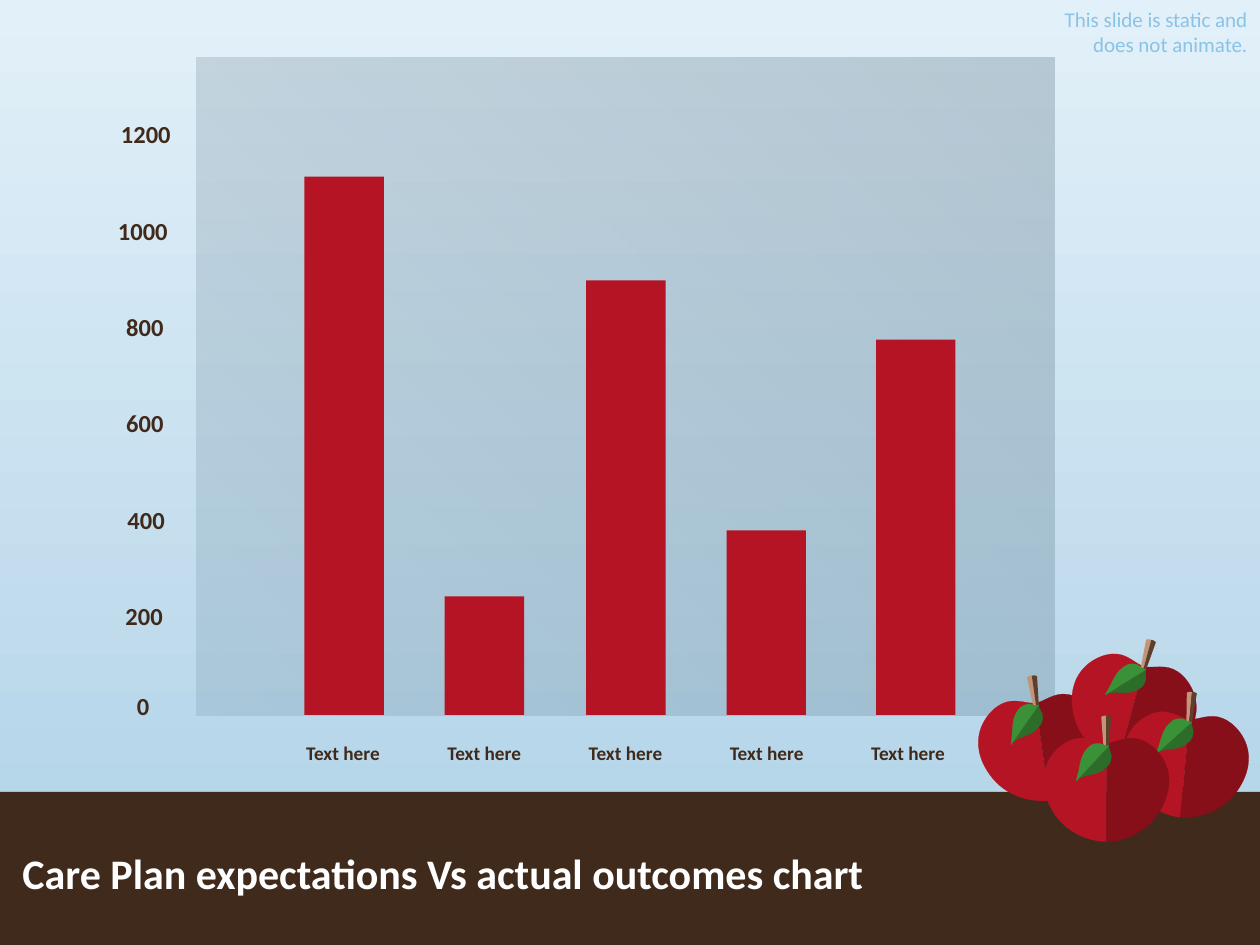
from dataclasses import dataclass
from math import cos, radians, sin

from lxml import etree
from pptx import Presentation
from pptx.dml.color import RGBColor
from pptx.enum.shapes import MSO_SHAPE
from pptx.enum.text import MSO_AUTO_SIZE, PP_ALIGN
from pptx.oxml.ns import qn
from pptx.util import Inches, Pt

RECTANGLE = MSO_SHAPE.RECTANGLE
GROW = MSO_AUTO_SIZE.SHAPE_TO_FIT_TEXT
LEFT, CENTER, RIGHT = PP_ALIGN.LEFT, PP_ALIGN.CENTER, PP_ALIGN.RIGHT

COLUMNS, ROWS = 100, 75
BASELINE = 56.75
TICK_STEP = 7.65
ROWS_PER_UNIT = TICK_STEP / 200
BAR_WIDTH = 6.3
FLOOR = 62.85

TICKS = [("0", 7.36), ("200", 7.44), ("400", 7.6), ("600", 7.5),
         ("800", 7.5), ("1000", 7.34), ("1200", 7.58)]
BARS = [(24.17, 1117), (35.3, 246), (46.53, 902), (57.67, 383), (69.53, 779)]
APPLES = [(82.2, 55.8, -8), (90.8, 52.9, 15.2), (94.4, 57.1, 5.3), (87.8, 59, 0)]

FLESH = [(0, 0), [(-0.7, 0), (-1.6, -0.7), (-2.7, -0.3)],
         [(-3.9, 0.1), (-5.8, 1.9), (-4.6, 4.7)],
         [(-3.4, 7.5), (-0.7, 7.8), (0, 7.8)]]
STEM = [(0, -2.2), [(-0.2, -2.2), (-0.3, -2.2), (-0.4, -2.1)],
        (-0.2, 0.5), [(-0.2, 0.5), (-0.1, 0.6), (0, 0.6)]]
LEAF_SHADE = [(-2.4, 3), [(-2, 2.6), (-1.7, 2.6), (-1.3, 2.5)],
              [(-0.8, 2.4), (-0.4, 2.3), (0, 1.9)],
              [(0.4, 1.6), (0.4, 1.2), (0.4, 0.9)],
              [(0.3, 0.7), (0.2, 0.3), (0.2, 0.2)]]
LEAF_LIGHT = [(-2.4, 3), (0.2, 0.2), [(-0.1, 0.2), (-0.3, 0.1), (-0.5, 0)],
              [(-0.8, 0), (-1.2, 0), (-1.5, 0.4)],
              [(-1.9, 0.8), (-2, 1.3), (-2.1, 1.7)],
              [(-2.2, 2.3), (-2.3, 2.6), (-2.4, 3)]]


@dataclass(frozen=True)
class Theme:
    font: str = "Calibri"
    sky: tuple = ("E2F0F9", "AED1E6")
    panel: str = "0E2C3E"
    brown: str = "402A1C"
    white: str = "FFFFFF"
    note: str = "89C3E5"
    red: str = "B41423"
    dark_red: str = "870F1A"
    stem: str = "C29578"
    dark_stem: str = "5F3F2B"
    leaf: str = "3B9137"
    dark_leaf: str = "2C6D29"
    title_size: int = 24
    tick_size: int = 14
    note_size: int = 12
    label_size: int = 11


def mirror(outline):
    return [[(-x, y) for x, y in step] if isinstance(step, list) else (-step[0], step[1])
            for step in outline]


def flatten(outline):
    return [point for step in outline
            for point in (step if isinstance(step, list) else [step])]


def middle(values):
    return (min(values) + max(values)) / 2


def bend(shape, steps):
    lines = iter(list(shape._element.iter(qn("a:lnTo"))))
    for step in steps[1:]:
        if isinstance(step, tuple):
            next(lines)
            continue
        curve = etree.Element(qn("a:cubicBezTo"))
        first, second, last = next(lines), next(lines), next(lines)
        first.addprevious(curve)
        for line in (first, second, last):
            curve.append(line[0])
            line.getparent().remove(line)


class Canvas:
    def __init__(self, deck, theme):
        self.theme = theme
        self.slide = deck.slides.add_slide(deck.slide_layouts[6])
        self.column = deck.slide_width / COLUMNS
        self.row = deck.slide_height / ROWS

    def place(self, x, y):
        return round(x * self.column), round(y * self.row)

    def gradient(self, fill, colors, angle):
        fill.gradient()
        fill.gradient_angle = angle
        for stop, color, position in zip(fill.gradient_stops, colors, (0, 1)):
            stop.color.rgb = RGBColor.from_string(color)
            stop.position = position

    def background(self):
        self.gradient(self.slide.background.fill, self.theme.sky, 270)

    def paint(self, shape, color, outlined=False):
        shape.shadow.inherit = False
        shape.fill.solid()
        shape.fill.fore_color.rgb = RGBColor.from_string(color)
        if outlined:
            shape.line.color.rgb = RGBColor.from_string(color)
            shape.line.width = Pt(0.1)
        else:
            shape.line.fill.background()

    def rectangle(self, x, y, width, height, color):
        shape = self.slide.shapes.add_shape(
            RECTANGLE, *self.place(x, y), *self.place(width, height))
        self.paint(shape, color)
        return shape

    def panel(self, x, y, width, height):
        shape = self.rectangle(x, y, width, height, self.theme.panel)
        self.gradient(shape.fill, (self.theme.panel,) * 2, 45)
        for color, alpha in zip(shape._element.iter(qn("a:srgbClr")), (10000, 20000)):
            etree.SubElement(color, qn("a:alpha"), val=str(alpha))

    def text(self, x, y, width, height, lines, size, color, align=CENTER, bold=True):
        box = self.slide.shapes.add_textbox(*self.place(x, y), *self.place(width, height))
        frame = box.text_frame
        frame.word_wrap = True
        frame.auto_size = GROW
        frame.text = lines
        for paragraph in frame.paragraphs:
            paragraph.alignment = align
            font = paragraph.font
            font.name, font.size, font.bold = self.theme.font, Pt(size), bold
            font.color.rgb = RGBColor.from_string(color)

    def outline(self, group, steps, x, y, angle, color, outlined):
        points = flatten(steps)
        mid_x, mid_y = (middle(values) for values in zip(*points))
        turn = radians(angle)
        shift_x = x + mid_x * cos(turn) - mid_y * sin(turn) - mid_x
        shift_y = y + mid_x * sin(turn) + mid_y * cos(turn) - mid_y
        places = [self.place(px + shift_x, py + shift_y) for px, py in points]
        builder = group.shapes.build_freeform(*places[0], scale=1.0)
        builder.add_line_segments(places[1:], close=True)
        shape = builder.convert_to_shape()
        bend(shape, steps)
        shape.rotation = angle
        self.paint(shape, color, outlined)

    def apple(self, x, y, angle):
        theme = self.theme
        group = self.slide.shapes.add_group_shape()
        parts = [(FLESH, theme.red, True), (mirror(FLESH), theme.dark_red, True),
                 (STEM, theme.stem, False), (mirror(STEM), theme.dark_stem, False),
                 (LEAF_SHADE, theme.dark_leaf, True), (LEAF_LIGHT, theme.leaf, True)]
        for steps, color, outlined in parts:
            self.outline(group, steps, x, y, angle, color, outlined)


def main():
    deck = Presentation()
    deck.slide_width, deck.slide_height = Inches(10), Inches(7.5)
    theme = Theme()
    canvas = Canvas(deck, theme)
    canvas.background()
    canvas.panel(15.6, 4.6, 68.1, 52.2)
    for index, (label, left) in enumerate(TICKS):
        top = min(54.35, 54.87 - index * TICK_STEP)
        canvas.text(left, top, 8, 3.4, label, theme.tick_size, theme.brown)
    canvas.rectangle(0, FLOOR, COLUMNS, ROWS - FLOOR, theme.brown)
    canvas.text(0.8, 66.8, 86.3, 5, "Care Plan expectations Vs actual outcomes chart",
                theme.title_size, theme.white, LEFT)
    for index in range(len(BARS)):
        canvas.text(22.17 + index * 11.21, 58.35, 10.1, 2.9, "Text here",
                    theme.label_size, theme.brown)
    for x, y, angle in APPLES:
        canvas.apple(x, y, angle)
    for left, value in BARS:
        height = value * ROWS_PER_UNIT
        canvas.rectangle(left, BASELINE - height, BAR_WIDTH, height, theme.red)
    canvas.text(78.7, 0, 21.3, 5, "This slide is static and\ndoes not animate.",
                theme.note_size, theme.note, RIGHT, bold=False)
    deck.save("out.pptx")


if __name__ == "__main__":
    main()
